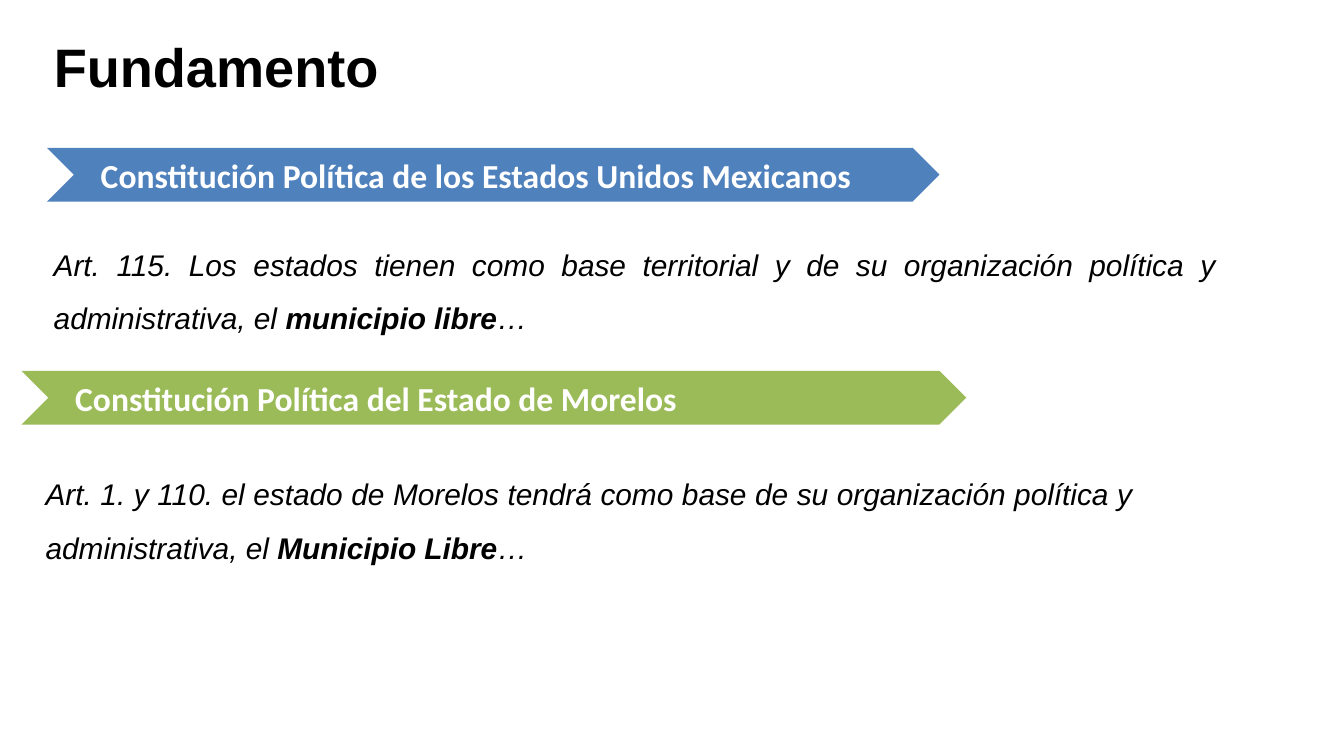
from dataclasses import dataclass

from pptx import Presentation
from pptx.dml.color import RGBColor
from pptx.enum.shapes import MSO_SHAPE
from pptx.enum.text import MSO_ANCHOR, MSO_AUTO_SIZE, PP_ALIGN
from pptx.util import Inches, Pt

CHEVRON = MSO_SHAPE.CHEVRON
TOP, MIDDLE = MSO_ANCHOR.TOP, MSO_ANCHOR.MIDDLE
LEFT, JUSTIFY = PP_ALIGN.LEFT, PP_ALIGN.JUSTIFY
FIT = MSO_AUTO_SIZE.SHAPE_TO_FIT_TEXT


@dataclass(frozen=True)
class Theme:
    ink: RGBColor = RGBColor(0, 0, 0)
    paper: RGBColor = RGBColor(255, 255, 255)
    blue: RGBColor = RGBColor.from_string("4F81BD")
    green: RGBColor = RGBColor.from_string("9BBB59")
    body_font: str = "Arial"
    banner_font: str = "Calibri"
    title_size: int = 29
    banner_size: int = 18
    article_size: int = 16


THEME = Theme()
SLIDE_WIDTH = 10
SLIDE_HEIGHT = SLIDE_WIDTH * 9 / 16
BANNER_HEIGHT = 0.4
BANNER_INSETS = 0.2, 0.05, 0.1, 0.05
TEXT_INSETS = 0.01, 0.02, 0, 0

HEADING = "Fundamento"
HEADING_BOX = 0.39, 0.23, 5.31, 0.5

# Each law: banner (left, top, width), then article (left, top, width, height)
# and its wording as (text, bold) pieces.
LAWS = [
    {
        "name": "Constitución Política de los Estados Unidos Mexicanos",
        "color": THEME.blue,
        "banner": (0.35, 1.1, 6.64),
        "article": (0.39, 1.68, 8.66, 0.82),
        "wording": [
            ("Art. 115. Los estados tienen como base territorial y de su "
             "organización política y administrativa, el ", False),
            ("municipio libre", True),
            ("…", False),
        ],
    },
    {
        "name": "Constitución Política del Estado de Morelos",
        "color": THEME.green,
        "banner": (0.16, 2.76, 7.03),
        "article": (0.33, 3.39, 8.1, 0.77),
        "wording": [
            ("Art. 1. y 110. el estado de Morelos tendrá como base de su "
             "organización política y administrativa, el ", False),
            ("Municipio Libre", True),
            ("…", False),
        ],
    },
]


def inches(lengths):
    return [Inches(length) for length in lengths]


def set_frame(frame, insets, anchor):
    """Wrap the text and set its insets: left, top, right, bottom."""
    frame.word_wrap = True
    frame.auto_size = FIT
    frame.vertical_anchor = anchor
    (frame.margin_left, frame.margin_top,
     frame.margin_right, frame.margin_bottom) = inches(insets)


def set_font(font, name, size, color, bold=False, italic=False):
    font.name, font.size = name, Pt(size)
    font.bold, font.italic = bold, italic
    font.color.rgb = color


def add_heading(slide):
    heading = slide.shapes.title
    heading.left, heading.top, heading.width, heading.height = inches(HEADING_BOX)
    frame = heading.text_frame
    set_frame(frame, TEXT_INSETS, TOP)
    frame.text = HEADING
    frame.paragraphs[0].alignment = LEFT
    set_font(frame.paragraphs[0].runs[0].font, THEME.body_font,
             THEME.title_size, THEME.ink, bold=True)


def add_banner(slide, law):
    banner = slide.shapes.add_shape(
        CHEVRON, *inches((*law["banner"], BANNER_HEIGHT)))
    banner.shadow.inherit = False
    banner.fill.solid()
    banner.fill.fore_color.rgb = law["color"]
    banner.line.fill.background()
    frame = banner.text_frame
    set_frame(frame, BANNER_INSETS, MIDDLE)
    frame.text = law["name"]
    frame.paragraphs[0].alignment = LEFT
    set_font(frame.paragraphs[0].runs[0].font, THEME.banner_font,
             THEME.banner_size, THEME.paper, bold=True)


def add_article(slide, law):
    frame = slide.shapes.add_textbox(*inches(law["article"])).text_frame
    set_frame(frame, TEXT_INSETS, TOP)
    article = frame.paragraphs[0]
    article.alignment = JUSTIFY
    article.line_spacing = 1.5
    for words, bold in law["wording"]:
        run = article.add_run()
        run.text = words
        set_font(run.font, THEME.body_font, THEME.article_size, THEME.ink,
                 bold=bold, italic=True)


def main():
    deck = Presentation()
    deck.slide_width, deck.slide_height = inches((SLIDE_WIDTH, SLIDE_HEIGHT))
    title_only = deck.slide_layouts.get_by_name("Title Only")
    slide = deck.slides.add_slide(title_only)
    add_heading(slide)
    for law in LAWS:
        add_banner(slide, law)
        add_article(slide, law)
    deck.save("out.pptx")


if __name__ == "__main__":
    main()
